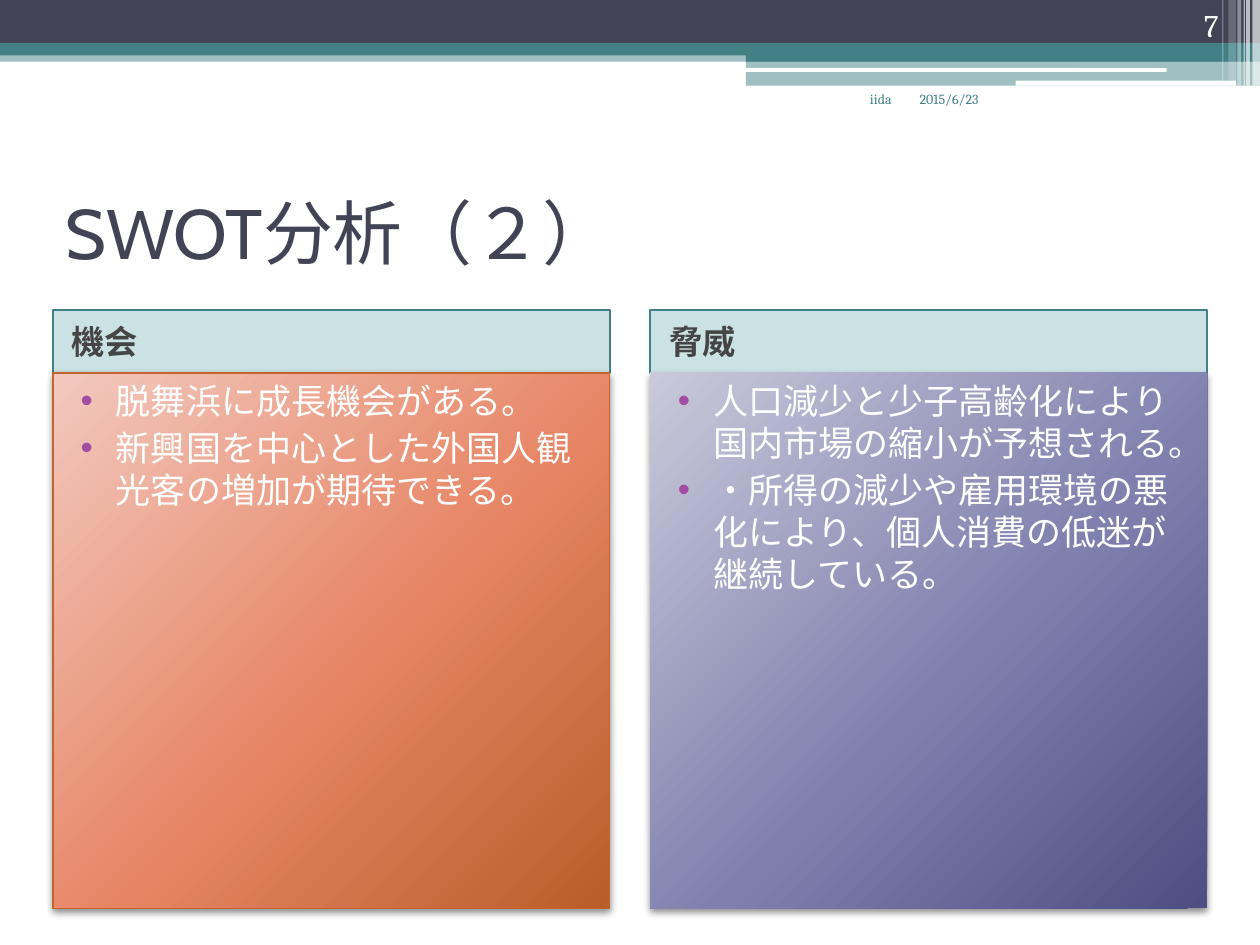
from dataclasses import dataclass

from lxml import etree
from pptx import Presentation
from pptx.dml.color import RGBColor
from pptx.enum.shapes import MSO_SHAPE
from pptx.enum.text import MSO_ANCHOR, MSO_AUTO_SIZE, PP_ALIGN
from pptx.oxml import parse_xml
from pptx.oxml.ns import nsdecls, qn
from pptx.util import Inches, Pt

RECT, ROUNDED = MSO_SHAPE.RECTANGLE, MSO_SHAPE.ROUNDED_RECTANGLE
TOP, MIDDLE, BOTTOM = MSO_ANCHOR.TOP, MSO_ANCHOR.MIDDLE, MSO_ANCHOR.BOTTOM
LEFT, RIGHT = PP_ALIGN.LEFT, PP_ALIGN.RIGHT
NO_FIT = MSO_AUTO_SIZE.NONE

COLORS = {
    "navy": "424456", "teal": "438086", "aqua": "328E97", "white": "FFFFFF",
    "grey": "454545", "bullet": "A04DA3", "orange_edge": "C4652D",
}
HEADING_FONT, BODY_FONT = "Cabin", "Cambria"

SLIDE_W, SLIDE_H = 10, 7.5
MARGIN, COLUMN_W, COLUMN_STEP = 0.42, 4.42, 4.74
HEADER_TOP, HEADER_H, LIST_H = 2.46, 0.5, 4.25


@dataclass
class Box:
    left: float
    top: float
    width: float
    height: float


@dataclass
class Band:
    box: Box
    color: str
    opacity: int = 100
    shape: int = RECT


@dataclass
class Style:
    size: float
    color: str
    font: str = BODY_FONT
    bold: bool = False
    align: int = LEFT
    anchor: int = TOP


@dataclass
class Quadrant:
    heading: str
    points: list[str]
    gradient: list[str]
    edge: str | None = None


BANDS = [
    Band(Box(0, 0.4, SLIDE_W, 0.09), "teal", 50),
    Band(Box(0, 0, SLIDE_W, 0.34), "navy"),
    Band(Box(0, 0.34, SLIDE_W, 0.1), "teal"),
    Band(Box(5.92, 0.39, 4.08, 0.1), "teal"),
    Band(Box(5.92, 0.48, 4.08, 0.2), "teal", 50),
    Band(Box(5.91, 0.54, 3.35, 0.03), "white", shape=ROUNDED),
    Band(Box(8.06, 0.64, 1.75, 0.04), "white", shape=ROUNDED),
] + [
    Band(Box(left, 0, width, height), "white", opacity)
    for left, width, height, opacity in [
        (9.94, 0.06, 0.68, 65), (9.89, 0.03, 0.68, 65), (9.87, 0.01, 0.68, 60),
        (9.82, 0.03, 0.68, 40), (9.75, 0.06, 0.64, 20), (9.7, 0.01, 0.64, 30),
    ]
]

QUADRANTS = [
    Quadrant("機会",
             ["脱舞浜に成長機会がある。",
              "新興国を中心とした外国人観光客の増加が期待できる。"],
             ["F2C9BF", "E78463", "B75E2A"], "orange_edge"),
    Quadrant("脅威",
             ["人口減少と少子高齢化により国内市場の縮小が予想される。",
              "・所得の減少や雇用環境の悪化により、個人消費の低迷が継続している。"],
             ["C9C9DA", "7F80AE", "4D4E81"]),
]

TITLE = Style(40, "navy", HEADING_FONT, anchor=MIDDLE)
HEADER = Style(19, "grey", bold=True, anchor=MIDDLE)
POINT = Style(20, "white")
FOOTER = Style(8, "teal")
FOOTER_RIGHT = Style(8, "teal", align=RIGHT)
PAGE_NUMBER = Style(18, "white", align=RIGHT, anchor=BOTTOM)


def rgb(name: str) -> RGBColor:
    return RGBColor.from_string(COLORS[name])


def place(shape, box: Box) -> None:
    shape.left, shape.top = Inches(box.left), Inches(box.top)
    shape.width, shape.height = Inches(box.width), Inches(box.height)


def fill_solid(shape, color: str, opacity: int = 100) -> None:
    shape.fill.solid()
    shape.fill.fore_color.rgb = rgb(color)
    if opacity < 100:
        tint = shape.fill._xPr.find(qn("a:solidFill"))[0]
        etree.SubElement(tint, qn("a:alpha"), val=str(opacity * 1000))


def fill_radial(shape, gradient: list[str]) -> None:
    """Spread three colours outward from a focus above the shape, and add a soft shadow."""
    stops = "".join(f'<a:gs pos="{pos}000"><a:srgbClr val="{color}"/></a:gs>'
                    for pos, color in zip((0, 55, 100), gradient))
    fill = parse_xml(
        f'<a:gradFill {nsdecls("a")} rotWithShape="1"><a:gsLst>{stops}</a:gsLst>'
        '<a:path path="circle"><a:fillToRect l="-40000" t="-90000" r="140000" b="190000"/>'
        '</a:path></a:gradFill>')
    shadow = parse_xml(
        f'<a:effectLst {nsdecls("a")}><a:outerShdw blurRad="{Pt(4)}" dist="{Pt(2)}" '
        'dir="5400000" rotWithShape="0"><a:srgbClr val="000000"><a:alpha val="45000"/>'
        '</a:srgbClr></a:outerShdw></a:effectLst>')
    shape.fill.background()
    properties = shape.fill._xPr
    properties.replace(properties.find(qn("a:noFill")), fill)
    properties.append(shadow)


def write(shape, lines: list[str], style: Style) -> None:
    frame = shape.text_frame
    frame.text = "\n".join(lines)
    frame.word_wrap, frame.auto_size = True, NO_FIT
    frame.vertical_anchor = style.anchor
    for paragraph in frame.paragraphs:
        paragraph.alignment = style.align
        for run in paragraph.runs:
            run.font.name, run.font.size = style.font, Pt(style.size)
            run.font.bold, run.font.color.rgb = style.bold, rgb(style.color)


def indent(paragraph, margin: float, first: float, bullet: str | None = None) -> None:
    paragraph.space_before = Pt(3)
    properties = paragraph._p.get_or_add_pPr()
    properties.set("marL", str(Inches(margin)))
    properties.set("indent", str(Inches(first)))
    if bullet:
        color = etree.SubElement(properties, qn("a:buClr"))
        etree.SubElement(color, qn("a:srgbClr"), val=COLORS["bullet"])
        etree.SubElement(properties, qn("a:buChar"), char=bullet)


def draw_band(slide, band: Band) -> None:
    shape = slide.shapes.add_shape(band.shape, 0, 0, 0, 0)
    place(shape, band.box)
    fill_solid(shape, band.color, band.opacity)
    shape.line.fill.background()
    shape.shadow.inherit = False


def draw_label(slide, box: Box, text: str, style: Style) -> None:
    label = slide.shapes.add_textbox(0, 0, 0, 0)
    place(label, box)
    write(label, [text], style)


def fill_quadrant(header, listing, column: int, quadrant: Quadrant) -> None:
    left = MARGIN + column * COLUMN_STEP
    place(header, Box(left, HEADER_TOP, COLUMN_W, HEADER_H))
    fill_solid(header, "aqua", 25)
    header.line.color.rgb, header.line.width = rgb("teal"), Pt(1)
    write(header, [quadrant.heading], HEADER)
    indent(header.text_frame.paragraphs[0], 0.05, 0)

    place(listing, Box(left, HEADER_TOP + HEADER_H, COLUMN_W, LIST_H))
    if quadrant.edge:
        listing.line.color.rgb, listing.line.width = rgb(quadrant.edge), Pt(0.75)
    fill_radial(listing, quadrant.gradient)
    write(listing, quadrant.points, POINT)
    for paragraph in listing.text_frame.paragraphs:
        indent(paragraph, 0.4, -0.28, "•")


def main() -> None:
    deck = Presentation()
    deck.slide_width, deck.slide_height = Inches(SLIDE_W), Inches(SLIDE_H)
    comparison = deck.slide_layouts[4]
    slide = deck.slides.add_slide(comparison)
    for band in BANDS:
        draw_band(slide, band)
    title, *bodies = slide.placeholders
    place(title, Box(MARGIN, 1.25, 9.17, 1.17))
    write(title, ["SWOT分析（２）"], TITLE)
    for column, quadrant in enumerate(QUADRANTS):
        fill_quadrant(*bodies[2 * column:2 * column + 2], column, quadrant)
    draw_label(slide, Box(7.2, 0.67, 1.05, 0.5), "2015/6/23", FOOTER)
    draw_label(slide, Box(8.94, 0, 0.83, 0.4), "7", PAGE_NUMBER)
    draw_label(slide, Box(5.75, 0.67, 1.45, 0.5), "iida ", FOOTER_RIGHT)
    deck.save("out.pptx")


if __name__ == "__main__":
    main()
